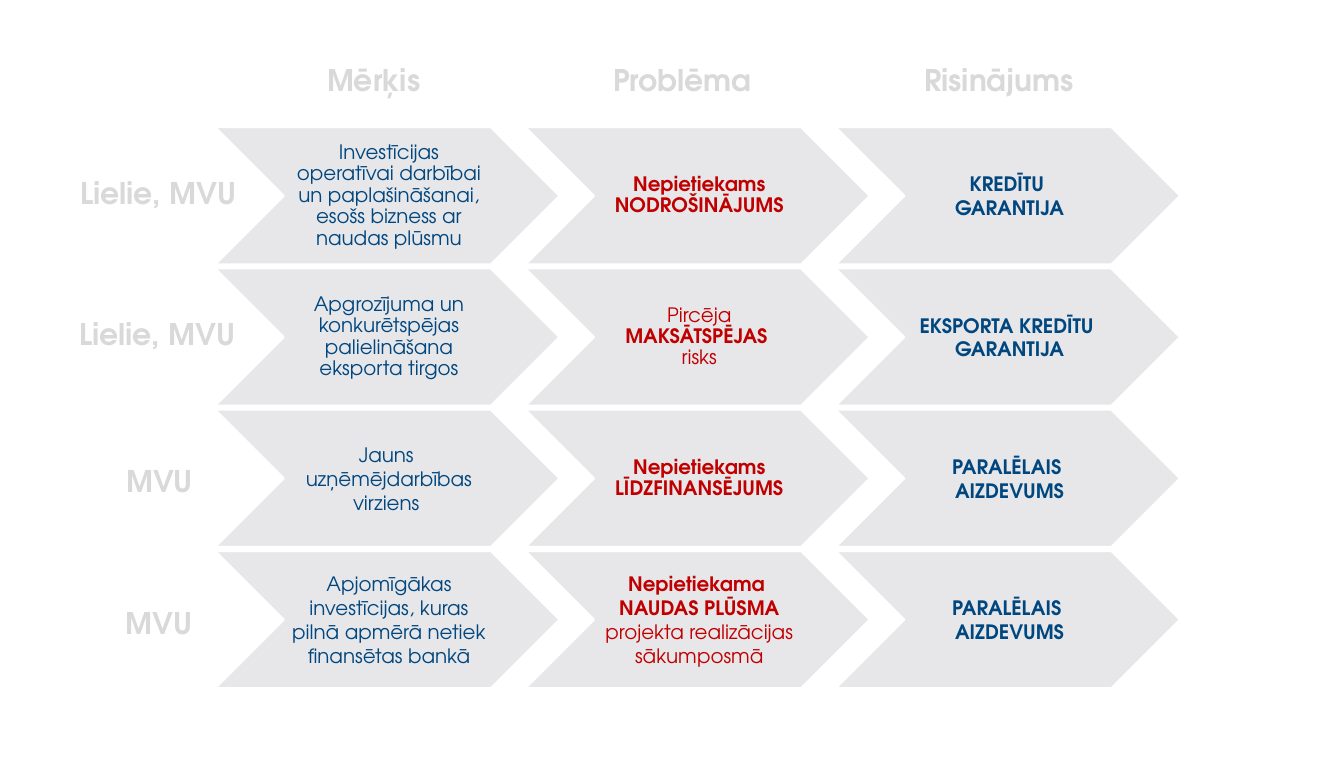
"""Build a slide of chevron rows linking goals, problems and solutions."""
from dataclasses import dataclass

from lxml.etree import _Element
from pptx import Presentation
from pptx.dml.color import RGBColor
from pptx.enum.shapes import MSO_SHAPE
from pptx.enum.text import MSO_ANCHOR, MSO_AUTO_SIZE, PP_ALIGN
from pptx.shapes.shapetree import GroupShapes, SlideShapes
from pptx.text.text import TextFrame
from pptx.util import Inches, Pt

FONT = "TeX Gyre Adventor"
BLUE, RED, GREY, PALE, WHITE = "00467F", "C00000", "D9D9D9", "E7E7E9", "FFFFFF"
LEFT, TOP = 2.4, 1.42
COLUMN_STEP, ROW_STEP = 3.47, 1.58
CHEVRON_WIDTH, CHEVRON_HEIGHT = 3.86, 1.54
TEXT_OFFSET, TEXT_WIDTH = 0.77, 2.31
CELL_FORMAT = {
    "word_wrap": True,
    "vertical_anchor": MSO_ANCHOR.MIDDLE,
    "margin_left": Inches(0.07),
    "margin_top": Inches(0.02),
    "margin_right": Inches(0.02),
    "margin_bottom": Inches(0.02),
}
LABEL_FORMAT = {"word_wrap": True, "auto_size": MSO_AUTO_SIZE.SHAPE_TO_FIT_TEXT}


@dataclass(frozen=True)
class Run:
    text: str
    bold: bool = False
    line_break: bool = False


@dataclass(frozen=True)
class Cell:
    paragraphs: list[list[Run]]
    line_spacing: float = 1.0


@dataclass(frozen=True)
class Label:
    text: str
    left: float
    top: float
    width: float


def plain(*texts: str, bold: bool = False, line_spacing: float = 1.0) -> Cell:
    return Cell([[Run(text, bold)] for text in texts], line_spacing)


COLUMN_COLORS = [BLUE, RED, BLUE]
PARALLEL_LOAN = plain("PARALĒLAIS ", "AIZDEVUMS", bold=True)
ROWS = [
    [
        plain("Investīcijas operatīvai darbībai un paplašināšanai, "
              "esošs bizness ar naudas plūsmu", line_spacing=0.9),
        plain("Nepietiekams NODROŠINĀJUMS", bold=True, line_spacing=0.9),
        plain("KREDĪTU ", "GARANTIJA", bold=True),
    ],
    [
        plain("Apgrozījuma un konkurētspējas palielināšana eksporta tirgos",
              line_spacing=0.9),
        Cell([[Run("Pircēja "), Run("MAKSĀTSPĒJAS ", True, True), Run("risks")]], 0.9),
        plain("EKSPORTA KREDĪTU ", "GARANTIJA", bold=True),
    ],
    [
        plain("Jauns ", "uzņēmējdarbības virziens "),
        plain("Nepietiekams LĪDZFINANSĒJUMS", bold=True, line_spacing=0.9),
        PARALLEL_LOAN,
    ],
    [
        plain("Apjomīgākas investīcijas, kuras pilnā apmērā netiek finansētas bankā"),
        Cell([
            [Run("Nepietiekama ", True)],
            [Run("NAUDAS PLŪSMA ", True), Run("projekta realizācijas sākumposmā")],
        ]),
        PARALLEL_LOAN,
    ],
]
LABELS = [
    Label("Mērķis ", 3.42, 0.64, 1.61),
    Label("Problēma", 6.49, 0.64, 2.28),
    Label("Risinājums", 10.03, 0.64, 2.28),
    Label("Lielie, MVU", 0.67, 1.91, 2.2),
    Label("Lielie, MVU", 0.66, 3.48, 2.2),
    Label("MVU", 0.98, 5.13, 1.61),
    Label("MVU", 0.97, 6.71, 1.61),
]


def rgb(color: str) -> RGBColor:
    return RGBColor.from_string(color)


def set_attributes(target: object, values: dict[str, object]) -> None:
    for name, value in values.items():
        setattr(target, name, value)


def write_text(frame: TextFrame, cell: Cell, color: str, size: float) -> None:
    for index, runs in enumerate(cell.paragraphs):
        paragraph = frame.add_paragraph() if index else frame.paragraphs[0]
        set_attributes(paragraph, {"alignment": PP_ALIGN.CENTER,
                                   "line_spacing": cell.line_spacing})
        for item in runs:
            run = paragraph.add_run()
            run.text = item.text
            set_attributes(run.font, {"name": FONT, "size": Pt(size), "bold": item.bold})
            run.font.color.rgb = rgb(color)
            if item.line_break:
                paragraph.add_line_break()


def draw_cell(shapes: GroupShapes, cell: Cell, color: str, left: float, top: float) -> None:
    chevron = shapes.add_shape(MSO_SHAPE.CHEVRON, Inches(left), Inches(top),
                               Inches(CHEVRON_WIDTH), Inches(CHEVRON_HEIGHT))
    chevron.shadow.inherit = False
    chevron.fill.solid()
    chevron.fill.fore_color.rgb = rgb(PALE)
    chevron.line.color.rgb = rgb(WHITE)
    chevron.line.width = Pt(2)
    box = shapes.add_textbox(Inches(left + TEXT_OFFSET), Inches(top),
                             Inches(TEXT_WIDTH), Inches(CHEVRON_HEIGHT))
    set_attributes(box.text_frame, CELL_FORMAT)
    write_text(box.text_frame, cell, color, 16)


def draw_label(shapes: SlideShapes, label: Label) -> None:
    box = shapes.add_textbox(Inches(label.left), Inches(label.top),
                             Inches(label.width), Inches(0.5))
    set_attributes(box.text_frame, LABEL_FORMAT)
    write_text(box.text_frame, plain(label.text, bold=True), GREY, 24)


def main() -> None:
    presentation = Presentation()
    set_attributes(presentation, {"slide_width": Inches(15.03), "slide_height": Inches(8.6)})
    slide = presentation.slides.add_slide(presentation.slide_layouts[6])
    for row, cells in enumerate(ROWS):
        group = slide.shapes.add_group_shape()
        for column, (cell, color) in enumerate(zip(cells, COLUMN_COLORS)):
            draw_cell(group.shapes, cell, color,
                      LEFT + column * COLUMN_STEP, TOP + row * ROW_STEP)
    for label in LABELS:
        draw_label(slide.shapes, label)
    presentation.save("out.pptx")


if __name__ == "__main__":
    main()
